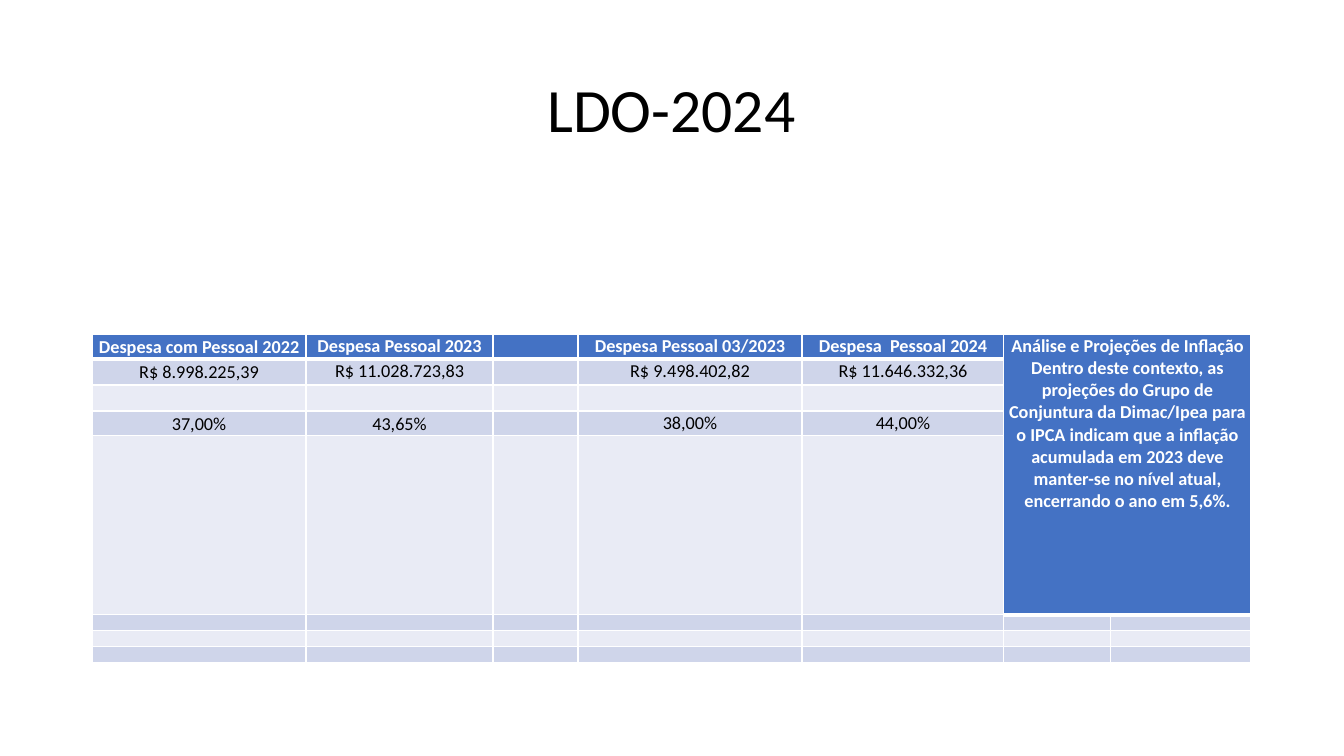
from lxml import etree
from pptx import Presentation
from pptx import util as u
from pptx.dml.color import RGBColor
from pptx.enum import text
from pptx.oxml import ns

PX = 914400 / 100.8
HUES = {"head": "4472C4", "odd": "CFD5EA", "even": "E9EBF5",
        "white": "FFFFFF", "ink": "000000"}
FACE = "Calibri"
MID = text.MSO_ANCHOR.MIDDLE
TOP = text.MSO_ANCHOR.TOP

COLS = [214, 187, 85, 224, 202, 107, 140]
ROWS = [25, 26, 26, 25, 179, 16, 16, 16]
NOTE = ["Análise e Projeções de Inflação",
        "Dentro deste contexto, as projeções do Grupo de Conjuntura da "
        "Dimac/Ipea para o IPCA indicam que a inflação acumulada em 2023 "
        "deve manter-se no nível atual, encerrando o ano em 5,6%."]
DATA = {
    0: ["Despesa com Pessoal 2022", "Despesa Pessoal 2023", "",
        "Despesa Pessoal 03/2023", "Despesa  Pessoal 2024", NOTE],
    1: ["R$ 8.998.225,39", "R$ 11.028.723,83", "",
        "R$ 9.498.402,82", "R$ 11.646.332,36"],
    3: ["37,00%", "43,65%", "", "38,00%", "44,00%"],
}
MIDS = {(0, 0), (1, 0), (3, 0), (3, 1)}
SPAN = (4, 5)  # last row and first column of the merged note


def px(n):
    return u.Emu(round(n * PX))


def apply(obj, vals):
    for key, val in vals.items():
        setattr(obj, key, val)


def style(font, size, hue, bold=False):
    apply(font, {"size": u.Pt(size), "name": FACE, "bold": bold})
    font.color.rgb = RGBColor.from_string(HUES[hue])


def sub(node, tag, **vals):
    return etree.SubElement(node, ns.qn(tag), **vals)


def edge(cell, base):
    """Draw the white cell borders; base is the lower border in points."""
    props = cell._tc.get_or_add_tcPr()
    for spot, (side, wide) in enumerate([("L", 1), ("R", 1), ("B", base)]):
        line = sub(props, f"a:ln{side}", w=str(u.Pt(wide)))
        sub(sub(line, "a:solidFill"), "a:srgbClr", val=HUES["white"])
        props.insert(spot, line)


def write(cell, words, head):
    """Fill a cell with lines of centred text."""
    para = cell.text_frame.paragraphs[0]
    para.alignment = text.PP_ALIGN.CENTER
    for num, line in enumerate(words):
        if num:
            para.add_line_break()
        run = para.add_run()
        run.text = line
        style(run.font, 13, "white" if head else "ink", head)
    for gap in para._p.findall(ns.qn("a:br")):
        sub(gap, "a:rPr", sz="1300")
    if not words:
        sub(para._p, "a:endParaRPr", sz="600")


def title(slide, box, words):
    shape = slide.shapes.title
    apply(shape, dict(zip(("left", "top", "width", "height"), map(px, box))))
    frame = shape.text_frame
    apply(frame, {"word_wrap": True, "vertical_anchor": MID})
    para = frame.paragraphs[0]
    apply(para, {"text": words, "line_spacing": 0.9,
                 "alignment": text.PP_ALIGN.CENTER})
    style(para.runs[0].font, 44, "ink")


def costs(slide, left, top):
    """Place the expense table with its merged note on the right."""
    grid = slide.shapes.add_table(len(ROWS), len(COLS), px(left), px(top),
                                  px(sum(COLS)), px(sum(ROWS))).table
    for col, wide in zip(grid.columns, COLS):
        col.width = px(wide)
    for row, high in zip(grid.rows, ROWS):
        row.height = px(high)
    last, first = SPAN
    grid.cell(0, first).merge(grid.cell(last, len(COLS) - 1))

    for r in range(len(ROWS)):
        for c in range(len(COLS)):
            cell = grid.cell(r, c)
            head = r == 0 or (r <= last and c >= first)
            vals = DATA.get(r, [])
            words = vals[c] if c < len(vals) else ""
            if isinstance(words, str):
                words = [words] if words else []
            apply(cell, {"margin_left": px(1), "margin_right": px(1),
                         "margin_top": px(1), "margin_bottom": 0,
                         "vertical_anchor": MID if (r, c) in MIDS else TOP})
            hue = "head" if head else "odd" if r % 2 else "even"
            cell.fill.solid()
            cell.fill.fore_color.rgb = RGBColor.from_string(HUES[hue])
            edge(cell, 3 if head else 1)
            write(cell, words, head)


def main():
    deck = Presentation()
    apply(deck, {"slide_width": px(1344), "slide_height": px(756)})
    slide = deck.slides.add_slide(deck.slide_layouts[5])
    title(slide, (92, 40, 1159, 146), "LDO-2024")
    costs(slide, 92, 334)
    deck.save("out.pptx")


if __name__ == "__main__":
    main()
